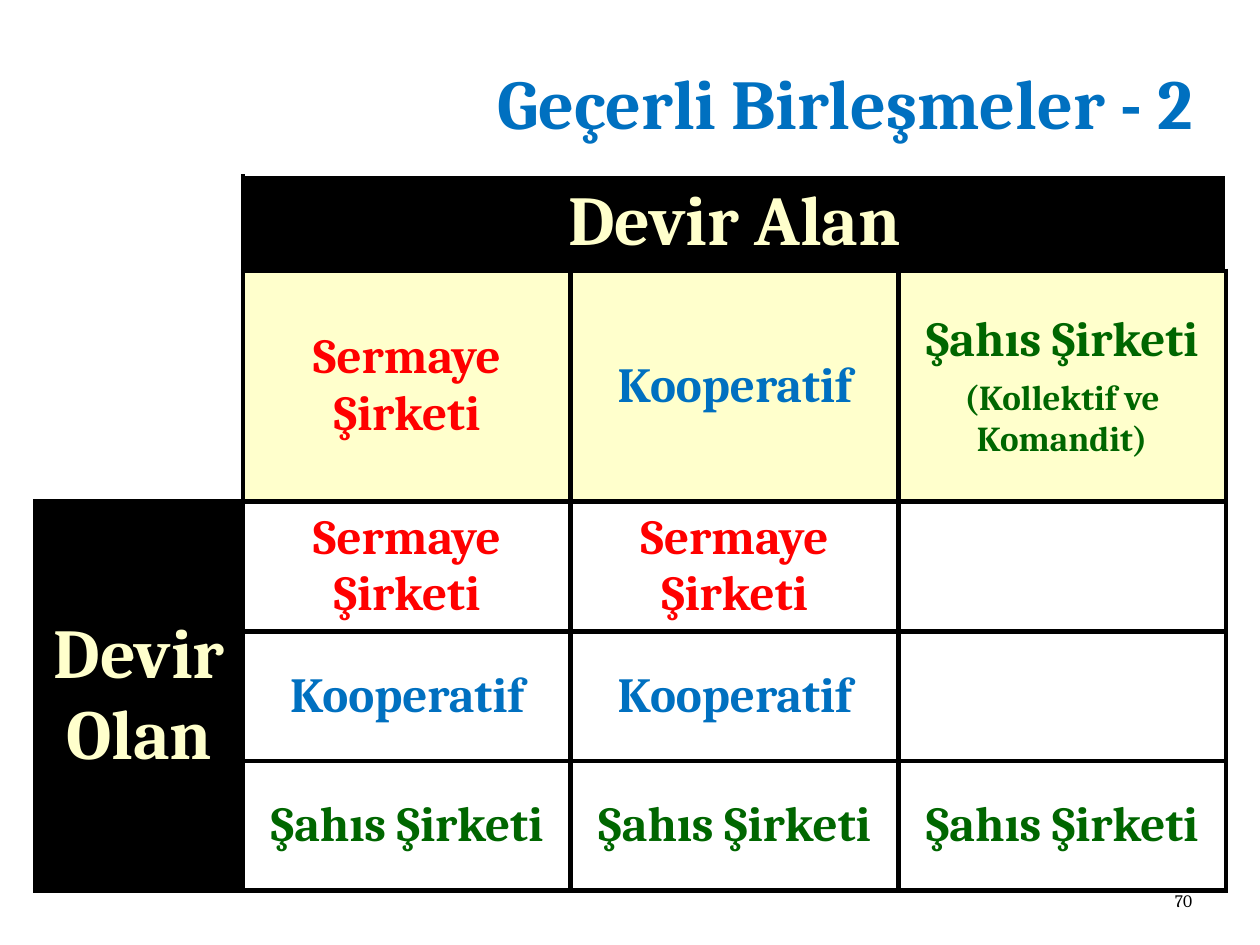
from lxml.etree import SubElement
from pptx import Presentation
from pptx.dml.color import RGBColor
from pptx.enum.text import MSO_ANCHOR, PP_ALIGN
from pptx.oxml.ns import qn
from pptx.util import Inches, Pt

COLORS = {"black": "000000", "cream": "FFFFCC", "blue": "0070C0",
          "red": "FF0000", "green": "006600"}
FONT = "Cambria"

# Each company type: its label and colour
CAPITAL = ("Sermaye Şirketi", "red")
COOPERATIVE = ("Kooperatif", "blue")
PARTNERSHIP = ("Şahıs Şirketi", "green")
ACQUIRERS = [CAPITAL, COOPERATIVE, PARTNERSHIP]
MERGERS = [[CAPITAL, CAPITAL, None],
           [COOPERATIVE, COOPERATIVE, None],
           [PARTNERSHIP, PARTNERSHIP, PARTNERSHIP]]
COLUMNS = [1.65, 2.6, 2.6, 2.6]
ROWS = [0.76, 1.83, 1.03, 1.03, 1.03]


def color(name):
    return RGBColor.from_string(COLORS[name])


def style(para, size, name, align, bold=True):
    para.alignment = align
    para.font.name, para.font.size, para.font.bold = FONT, Pt(size), bold
    para.font.color.rgb = color(name)


def place(shape, box):
    shape.left, shape.top, shape.width, shape.height = map(Inches, box)


def add_title(page, box):
    title = page.shapes.title
    place(title, box)
    title.text_frame.text = "Geçerli Birleşmeler - 2"
    title.text_frame.vertical_anchor = MSO_ANCHOR.BOTTOM
    style(title.text_frame.paragraphs[0], 40, "blue", PP_ALIGN.RIGHT)


def add_page_number(page, box):
    frame = page.shapes.add_textbox(*map(Inches, box)).text_frame
    frame.word_wrap = True
    frame.vertical_anchor = MSO_ANCHOR.BOTTOM
    frame.text = "70"
    style(frame.paragraphs[0], 10, "black", PP_ALIGN.RIGHT, bold=False)


def set_borders(cell, sides):
    properties = cell._tc.get_or_add_tcPr()
    for side in "LRTB":
        if side in sides:
            line = SubElement(properties, qn(f"a:ln{side}"), w=str(Pt(3)))
            fill = SubElement(line, qn("a:solidFill"))
            SubElement(fill, qn("a:srgbClr"), val=COLORS["black"])


def set_fill(cell, name):
    if name:
        cell.fill.solid()
        cell.fill.fore_color.rgb = color(name)
    else:
        cell.fill.background()


def write(cell, text, name, size=28):
    cell.vertical_anchor = MSO_ANCHOR.MIDDLE
    cell.margin_left = cell.margin_right = Inches(0.07)
    cell.margin_top = cell.margin_bottom = 0
    cell.text = text
    style(cell.text_frame.paragraphs[0], size, name, PP_ALIGN.CENTER)


def add_merger_table(page, box):
    frame = page.shapes.add_table(len(ROWS), len(COLUMNS), *map(Inches, box))
    table = frame.table
    table.first_row = table.horz_banding = False
    for column, width in zip(table.columns, COLUMNS):
        column.width = Inches(width)
    for row, height in zip(table.rows, ROWS):
        row.height = Inches(height)

    # Borders and fills: blank corner, black headings, cream acquirers
    for r in range(len(ROWS)):
        for c in range(len(COLUMNS)):
            cell = table.cell(r, c)
            if c == 0:
                sides = ["R", "RB"][r] if r < 2 else "LRTB"
                fill = "black" if r > 1 else None
            else:
                sides = "LRTB" if r else "LB"
                fill = ["black", "cream"][r] if r < 2 else None
            set_borders(cell, sides)
            set_fill(cell, fill)

    # Headings
    table.cell(0, 1).merge(table.cell(0, 3))
    table.cell(2, 0).merge(table.cell(4, 0))
    write(table.cell(0, 1), "Devir Alan", "cream", 40)
    write(table.cell(2, 0), "Devir Olan", "cream", 40)

    # Company types
    for r, companies in enumerate([ACQUIRERS] + MERGERS, start=1):
        for c, company in enumerate(companies, start=1):
            if company:
                write(table.cell(r, c), *company)
    note = table.cell(1, 3).text_frame.add_paragraph()
    note.text = "(Kollektif ve Komandit)"
    note.space_before = Pt(6)
    style(note, 20, "green", PP_ALIGN.CENTER)


def main():
    deck = Presentation()
    deck.slide_width, deck.slide_height = Inches(10), Inches(7.5)
    page = deck.slides.add_slide(deck.slide_layouts[5])
    add_title(page, (1.14, 0.25, 8.43, 0.94))
    add_merger_table(page, (0.28, 1.39, sum(COLUMNS), sum(ROWS)))
    add_page_number(page, (7.48, 6.9, 2.08, 0.38))
    deck.save("out.pptx")


if __name__ == "__main__":
    main()
